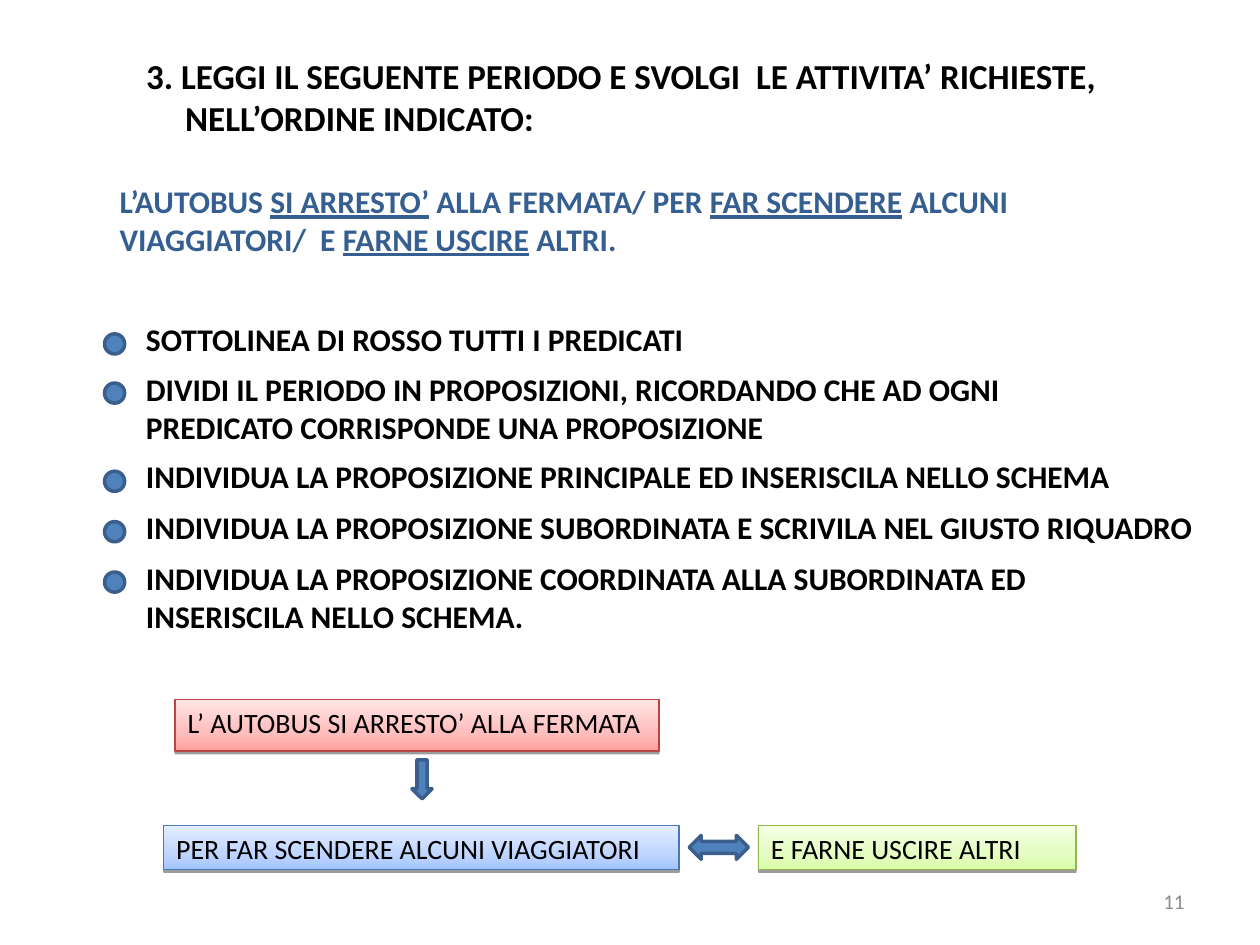
from dataclasses import dataclass

from lxml.etree import SubElement
from pptx import Presentation
from pptx.dml.color import RGBColor
from pptx.enum.shapes import MSO_SHAPE as Preset
from pptx.enum.text import MSO_ANCHOR as Anchor, MSO_AUTO_SIZE as AutoSize, PP_ALIGN as Align
from pptx.oxml.ns import qn
from pptx.util import Inches, Pt

COLORS = {
    "black": "000000",
    "sentence": "365F91",
    "accent": "4F81BD",
    "accent_line": "3A5F8C",
    "number": "8C8C8C",
}


@dataclass
class Run:
    text: str
    underline: bool = False


@dataclass
class Box:
    left: float
    top: float
    width: float
    height: float


@dataclass
class Task:
    top: float
    width: float
    lines: list[str]


@dataclass
class Clause:
    text: str
    box: Box
    stops: dict[int, str]
    line: str


@dataclass
class Arrow:
    preset: Preset
    box: Box


HEADING = [
    [Run("3. LEGGI IL SEGUENTE PERIODO E SVOLGI  LE ATTIVITA’ RICHIESTE,")],
    [Run("NELL’ORDINE INDICATO:")],
]
SENTENCE = [
    [Run("L’AUTOBUS "), Run("SI ARRESTO’", True), Run(" ALLA FERMATA/ PER "),
     Run("FAR SCENDERE", True), Run(" ALCUNI")],
    [Run("VIAGGIATORI/  E "), Run("FARNE USCIRE", True), Run(" ALTRI.")],
]
TASKS = [
    Task(2.49, 4.56, ["SOTTOLINEA DI ROSSO TUTTI I PREDICATI"]),
    Task(2.88, 7.1, ["DIVIDI IL PERIODO IN PROPOSIZIONI, RICORDANDO CHE AD OGNI",
                     "PREDICATO CORRISPONDE UNA PROPOSIZIONE"]),
    Task(3.58, 7.92, ["INDIVIDUA LA PROPOSIZIONE PRINCIPALE ED INSERISCILA NELLO SCHEMA"]),
    Task(3.98, 8.59, ["INDIVIDUA LA PROPOSIZIONE SUBORDINATA E SCRIVILA NEL GIUSTO RIQUADRO"]),
    Task(4.38, 7.31, ["INDIVIDUA LA PROPOSIZIONE COORDINATA ALLA SUBORDINATA ED",
                      "INSERISCILA NELLO SCHEMA."]),
]
CLAUSES = [
    Clause("L’ AUTOBUS SI ARRESTO’ ALLA FERMATA", Box(1.39, 5.55, 3.84, 0.41),
           {0: "FFA2A1", 35: "FFBEBD", 100: "FFE5E5"}, "BC4542"),
    Clause("PER FAR SCENDERE ALCUNI VIAGGIATORI", Box(1.3, 6.55, 4.09, 0.35),
           {0: "A3C4FF", 35: "BFD5FF", 100: "E5EEFF"}, "4579B8"),
    Clause("E FARNE USCIRE ALTRI", Box(6.02, 6.55, 2.52, 0.35),
           {0: "DAFDA7", 35: "E4FDC2", 100: "F5FFE6"}, "94B64E"),
]
ARROWS = [
    Arrow(Preset.LEFT_RIGHT_ARROW, Box(5.47, 6.63, 0.47, 0.19)),
    Arrow(Preset.DOWN_ARROW, Box(3.27, 6.03, 0.16, 0.31)),
]
TASK_LEFT = 1.06
BULLET_LEFT, BULLET_DROP, BULLET_SIZE = 0.83, 0.16, 0.16


def lengths(box: Box) -> list[int]:
    return [Inches(value) for value in (box.left, box.top, box.width, box.height)]


def write(shape, lines: list[list[Run]], size: int, color: str, bold: bool = True,
          wrap: bool = False, anchor: Anchor = Anchor.MIDDLE, align: Align = Align.LEFT) -> None:
    frame = shape.text_frame
    frame.word_wrap = wrap
    frame.auto_size = AutoSize.NONE if wrap else AutoSize.SHAPE_TO_FIT_TEXT
    frame.vertical_anchor = anchor
    for index, runs in enumerate(lines):
        paragraph = frame.add_paragraph() if index else frame.paragraphs[0]
        paragraph.alignment = align
        for part in runs:
            run = paragraph.add_run()
            run.text = part.text
            font = run.font
            font.name, font.size, font.bold = "Calibri", Pt(size), bold
            font.underline = part.underline
            font.color.rgb = RGBColor.from_string(color)


def add_text(slide, box: Box, lines: list[list[Run]], size: int, color: str, **options) -> None:
    write(slide.shapes.add_textbox(*lengths(box)), lines, size, color, **options)


def add_heading(slide) -> None:
    title = slide.shapes.title
    title.left, title.top, title.width, title.height = lengths(Box(1.06, 0.38, 7.81, 0.77))
    write(title, HEADING, 20, COLORS["black"])
    properties = title.text_frame.paragraphs[1]._p.get_or_add_pPr()
    properties.set("marL", str(Inches(0.31)))
    properties.set("indent", "0")


def add_solid(slide, preset: Preset, box: Box) -> None:
    shape = slide.shapes.add_shape(preset, *lengths(box))
    shape.shadow.inherit = False
    shape.fill.solid()
    shape.fill.fore_color.rgb = RGBColor.from_string(COLORS["accent"])
    shape.line.color.rgb = RGBColor.from_string(COLORS["accent_line"])
    shape.line.width = Pt(2)


def add_task(slide, task: Task) -> None:
    box = Box(TASK_LEFT, task.top, task.width, 0.4 if len(task.lines) == 1 else 0.71)
    add_text(slide, box, [[Run(line)] for line in task.lines], 18, COLORS["black"])
    add_solid(slide, Preset.FLOWCHART_CONNECTOR,
              Box(BULLET_LEFT, task.top + BULLET_DROP, BULLET_SIZE, BULLET_SIZE))


def set_gradient(shape, stops: dict[int, str]) -> None:
    shape.fill.gradient()
    gradient = shape._element.spPr.find(qn("a:gradFill"))
    for child in list(gradient):
        gradient.remove(child)
    stop_list = SubElement(gradient, qn("a:gsLst"))
    for position, color in stops.items():
        stop = SubElement(stop_list, qn("a:gs"), pos=str(position * 1000))
        SubElement(stop, qn("a:srgbClr"), val=color)
    SubElement(gradient, qn("a:lin"), ang=str(270 * 60000), scaled="0")


def set_shadow(shape) -> None:
    shape.shadow.inherit = False
    effects = shape._element.spPr.find(qn("a:effectLst"))
    shadow = SubElement(effects, qn("a:outerShdw"), blurRad="0", dist=str(Pt(1.6)),
                        dir=str(90 * 60000), rotWithShape="0")
    color = SubElement(shadow, qn("a:srgbClr"), val=COLORS["black"])
    SubElement(color, qn("a:alpha"), val="38000")


def add_clause(slide, clause: Clause) -> None:
    shape = slide.shapes.add_shape(Preset.RECTANGLE, *lengths(clause.box))
    set_gradient(shape, clause.stops)
    shape.line.color.rgb = RGBColor.from_string(clause.line)
    shape.line.width = Pt(0.75)
    set_shadow(shape)
    write(shape, [[Run(clause.text)]], 16, COLORS["black"], bold=False, wrap=True,
          anchor=Anchor.TOP)
    shape.text_frame.paragraphs[0].space_after = Pt(10)


def main() -> None:
    presentation = Presentation()
    presentation.slide_width, presentation.slide_height = Inches(10), Inches(7.5)
    slide = presentation.slides.add_slide(presentation.slide_layouts.get_by_name("Title Only"))
    add_heading(slide)
    add_text(slide, Box(0.85, 1.39, 7.38, 0.71), SENTENCE, 18, COLORS["sentence"])
    for task in TASKS:
        add_task(slide, task)
    for clause in CLAUSES:
        add_clause(slide, clause)
    for arrow in ARROWS:
        add_solid(slide, arrow.preset, arrow.box)
    add_text(slide, Box(7.17, 6.95, 2.33, 0.4), [[Run("11")]], 12, COLORS["number"],
             bold=False, wrap=True, align=Align.RIGHT)
    presentation.save("out.pptx")


if __name__ == "__main__":
    main()
